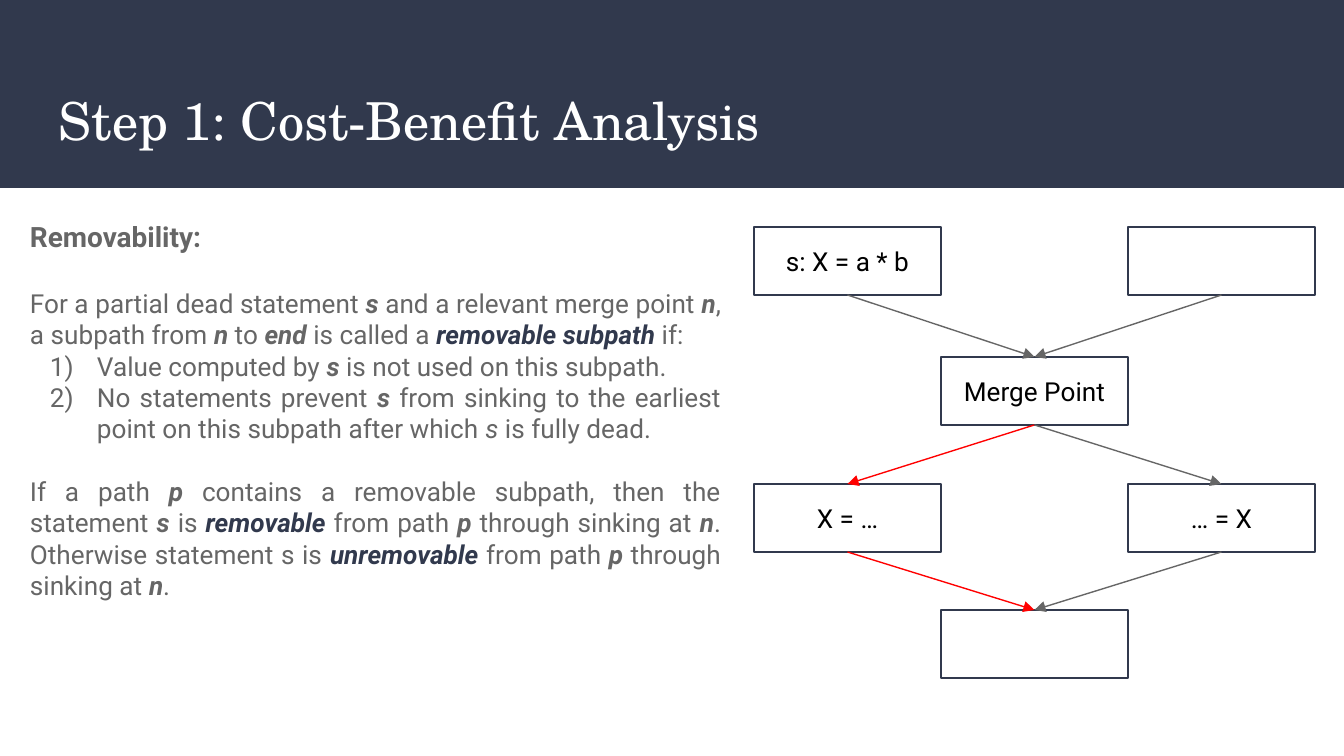
from lxml import etree
from pptx import Presentation
from pptx.dml.color import RGBColor
from pptx.enum.shapes import MSO_CONNECTOR, MSO_SHAPE
from pptx.enum.text import MSO_ANCHOR, PP_ALIGN
from pptx.oxml.ns import qn
from pptx.util import Emu, Pt

RECTANGLE, STRAIGHT = MSO_SHAPE.RECTANGLE, MSO_CONNECTOR.STRAIGHT
MIDDLE, TOP = MSO_ANCHOR.MIDDLE, MSO_ANCHOR.TOP
LEFT, CENTER, JUSTIFY = PP_ALIGN.LEFT, PP_ALIGN.CENTER, PP_ALIGN.JUSTIFY
PX_PER_INCH = 134.4
TOP_SITE, BOTTOM_SITE = 0, 2

COLORS = {"navy": "31394D", "grey": "666666", "white": "FFFFFF", "black": "000000", "red": "FF0000"}
SERIF, SANS = "TeX Gyre Schola", "Roboto"
SPAN_STYLES = {
    "plain": ("grey", False, False),
    "bold": ("grey", True, False),
    "italic": ("grey", False, True),
    "symbol": ("grey", True, True),
    "term": ("navy", True, True),
}

HEADING = [("Removability:", "bold")]
DEFINITION = [
    ("For a partial dead statement ", "plain"), ("s", "symbol"),
    (" and a relevant merge point ", "plain"), ("n", "symbol"),
    (", a subpath from ", "plain"), ("n", "symbol"), (" to ", "plain"), ("end", "symbol"),
    (" is called a ", "plain"), ("removable subpath", "term"), (" if:", "plain"),
]
NOT_USED = [
    ("Value computed by ", "plain"), ("s", "symbol"), (" is not used on this subpath.", "plain"),
]
NOT_PREVENTED = [
    ("No statements prevent ", "plain"), ("s", "symbol"),
    (" from sinking to the earliest point on this subpath after which ", "plain"),
    ("s", "italic"), (" is fully dead.", "plain"),
]
CONCLUSION = [
    ("If a path ", "plain"), ("p", "symbol"),
    (" contains a removable subpath, then the statement ", "plain"), ("s", "symbol"),
    (" is ", "plain"), ("removable", "term"), (" from path ", "plain"), ("p", "symbol"),
    (" through sinking at ", "plain"), ("n", "symbol"),
    (". Otherwise statement s is ", "plain"), ("unremovable", "term"),
    (" from path ", "plain"), ("p", "symbol"),
    (" through sinking at ", "plain"), ("n", "symbol"), (".", "plain"),
]
PARAGRAPHS = [
    (HEADING, 15, 0, False),
    (DEFINITION, 14, 18, False),
    (NOT_USED, 14, 0, True),
    (NOT_PREVENTED, 14, 0, True),
    (CONCLUSION, 14, 16.8, False),
]

NODE_LEFT, NODE_WIDTH, NODE_HEIGHT = 754, 187, 68
ROW_TOPS = [227, 357, 484, 610]
NODES = {
    "assign": (0, 0, "s: X = a * b"),
    "other": (2, 0, ""),
    "merge": (1, 1, "Merge Point"),
    "redefine": (0, 2, "X = …"),
    "use": (2, 2, "… = X"),
    "end": (1, 3, ""),
}
EDGES = [
    ("assign", "merge", "grey"),
    ("other", "merge", "grey"),
    ("merge", "redefine", "red"),
    ("merge", "use", "grey"),
    ("redefine", "end", "red"),
    ("use", "end", "grey"),
]


def px(length):
    """Turn pixels into EMU."""
    return Emu(round(length * 914400 / PX_PER_INCH))


class SlideBuilder:
    """Holds the style and the current slide, and draws each kind of element."""

    def __init__(self, deck):
        self.page = deck.slides.add_slide(deck.slide_layouts[6])
        self.shapes = self.page.shapes

    def color(self, name):
        return RGBColor.from_string(COLORS[name])

    def format_span(self, span, font, size, color, bold=False, italic=False):
        span.font.name, span.font.size = font, Pt(size)
        span.font.bold, span.font.italic = bold, italic
        span.font.color.rgb = self.color(color)

    def format_frame(self, frame, anchor):
        frame.word_wrap = True
        frame.vertical_anchor = anchor
        frame.margin_left = frame.margin_right = px(13)
        frame.margin_top = frame.margin_bottom = px(13)

    def label(self, box, text, font, size, color, align):
        self.format_frame(box.text_frame, MIDDLE)
        box.text_frame.text = text
        para = box.text_frame.paragraphs[0]
        para.alignment = align
        for span in para.runs:
            self.format_span(span, font, size, color)

    def rectangle(self, left, top, width, height, fill, line=None):
        box = self.shapes.add_shape(RECTANGLE, px(left), px(top), px(width), px(height))
        box.shadow.inherit = False
        box.fill.solid()
        box.fill.fore_color.rgb = self.color(fill)
        if line:
            box.line.color.rgb = self.color(line)
            box.line.width = Pt(0.75)
        else:
            box.line.fill.background()
        return box

    def title(self, left, top, width, height, text):
        box = self.shapes.add_textbox(px(left), px(top), px(width), px(height))
        self.label(box, text, SERIF, 28, "white", LEFT)

    def body(self, left, top, width, height, paragraphs):
        box = self.shapes.add_textbox(px(left), px(top), px(width), px(height))
        frame = box.text_frame
        self.format_frame(frame, TOP)
        for index, (spans, size, gap, numbered) in enumerate(paragraphs):
            para = frame.add_paragraph() if index else frame.paragraphs[0]
            para.alignment = JUSTIFY
            para.space_before = Pt(gap)
            if numbered:
                self.number(para)
            for text, style in spans:
                span = para.add_run()
                span.text = text
                self.format_span(span, SANS, size, *SPAN_STYLES[style])

    def number(self, para):
        properties = para._p.get_or_add_pPr()
        properties.set("marL", str(px(67)))
        properties.set("indent", str(px(-47)))
        etree.SubElement(properties, qn("a:buAutoNum"), type="arabicParenR")

    def node(self, column, row, text):
        left = NODE_LEFT + column * NODE_WIDTH
        box = self.rectangle(left, ROW_TOPS[row], NODE_WIDTH, NODE_HEIGHT, "white", "navy")
        if text:
            self.label(box, text, SANS, 14, "black", CENTER)
        return box

    def arrow(self, source, target, color):
        line = self.shapes.add_connector(STRAIGHT, 0, 0, 0, 0)
        line.begin_connect(source, BOTTOM_SITE)
        line.end_connect(target, TOP_SITE)
        line.line.color.rgb = self.color(color)
        line.line.width = Pt(0.75)
        etree.SubElement(line.line._get_or_add_ln(), qn("a:tailEnd"), type="triangle")
        etree.SubElement(line._element.spPr, qn("a:effectLst"))


def main():
    deck = Presentation()
    deck.slide_width, deck.slide_height = px(1344), px(756)
    builder = SlideBuilder(deck)
    builder.rectangle(0, 0, 1344, 188, "navy")
    builder.title(46, 74, 1252, 92, "Step 1: Cost-Benefit Analysis")
    builder.body(17, 207, 717, 495, PARAGRAPHS)
    boxes = {name: builder.node(*place) for name, place in NODES.items()}
    for source, target, color in EDGES:
        builder.arrow(boxes[source], boxes[target], color)
    deck.save("out.pptx")


if __name__ == "__main__":
    main()
